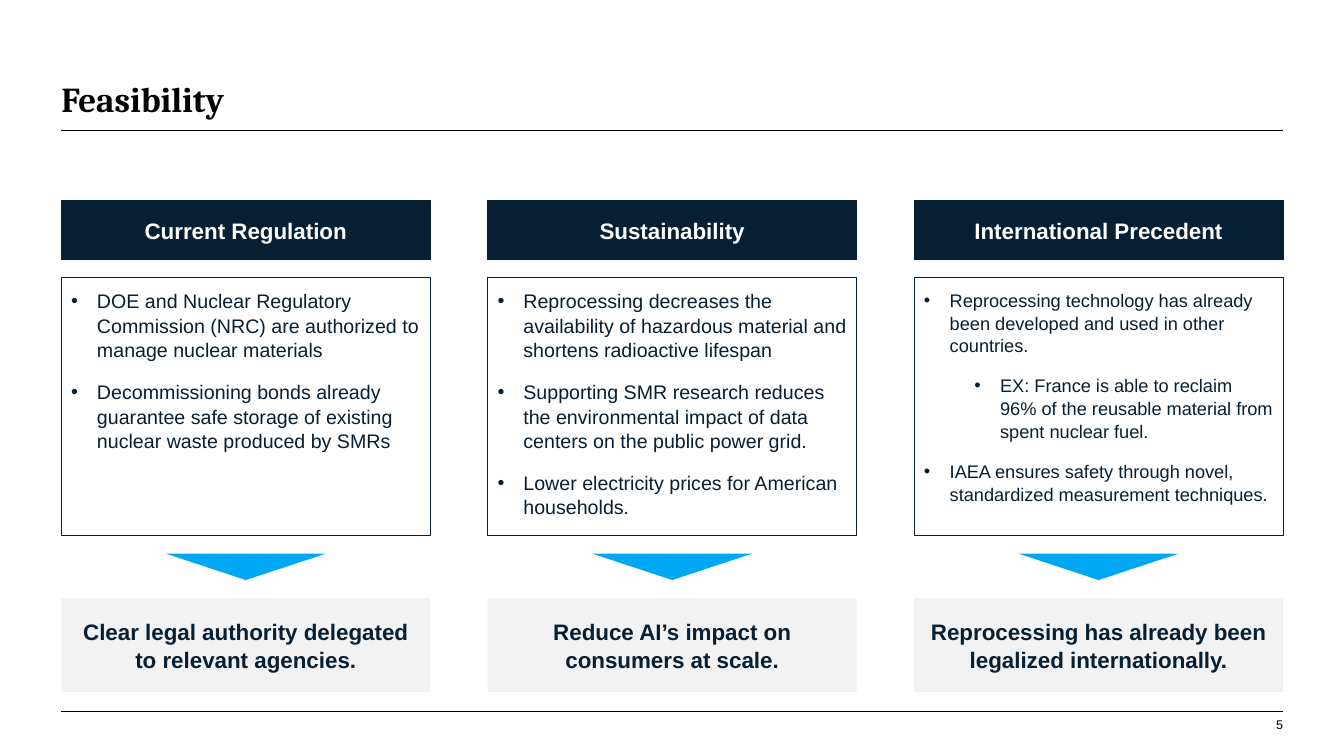
"""Build the Feasibility slide: three columns of heading, points, arrow and result."""
from dataclasses import dataclass

from lxml.etree import SubElement
from pptx import Presentation
from pptx.dml.color import RGBColor as RGB
from pptx.enum.shapes import MSO_CONNECTOR as LINE, MSO_SHAPE as SHAPE
from pptx.enum.text import MSO_ANCHOR as ANCHOR, MSO_AUTO_SIZE as FIT, PP_ALIGN as ALIGN
from pptx.oxml.ns import qn
from pptx.util import Pt


@dataclass(frozen=True)
class Theme:
    navy: str = "061F32"
    blue: str = "00A7F2"
    gray: str = "F2F2F2"
    white: str = "FFFFFF"
    black: str = "000000"
    serif: str = "Cambria"
    sans: str = "Arial"
    title: int = 25
    head: int = 16
    body: int = 14
    small: int = 13
    page: int = 9
    thin: float = 0.75


theme = Theme()


def write(shape, *items, size, color=theme.navy, font=theme.sans, bold=False,
          align=ALIGN.LEFT, anchor=ANCHOR.MIDDLE, side=7.2, edge=7.2,
          lead=1.05, bullet=False):
    """Fill a shape with (level, text) paragraphs in one format."""
    frame = shape.text_frame
    frame.word_wrap = True
    frame.auto_size = FIT.NONE
    frame.vertical_anchor = anchor
    frame.margin_left = frame.margin_right = Pt(side)
    frame.margin_top = frame.margin_bottom = Pt(edge)
    for i, (level, text) in enumerate(items):
        para = frame.add_paragraph() if i else frame.paragraphs[0]
        if bullet:
            props = para._p.get_or_add_pPr()
            props.set("marL", str(Pt(18.4 + 36 * level)))
            props.set("indent", str(Pt(-18.4)))
            tint = SubElement(props, qn("a:buClr"))
            SubElement(tint, qn("a:srgbClr"), val=color)
            SubElement(props, qn("a:buFont"), typeface=theme.sans)
            SubElement(props, qn("a:buChar"), char="•")
        para.level = level
        para.alignment = align
        para.line_spacing = lead
        para.space_before = Pt(12 if i else 0)
        para.space_after = Pt(0)
        run = para.add_run()
        run.text = text
        run.font.size = Pt(size)
        run.font.name = font
        run.font.bold = bold
        run.font.color.rgb = RGB.from_string(color)


def draw(kind, left, top, width, height, fill, line=None):
    """Add a flat filled shape with an optional outline."""
    shape = slide.shapes.add_shape(kind, Pt(left), Pt(top), Pt(width), Pt(height))
    shape.shadow.inherit = False
    shape.fill.solid()
    shape.fill.fore_color.rgb = RGB.from_string(fill)
    if line:
        shape.line.color.rgb = RGB.from_string(line)
        shape.line.width = Pt(theme.thin)
    else:
        shape.line.fill.background()
    return shape


deck = Presentation()
deck.slide_width, deck.slide_height = Pt(960), Pt(540)
slide = deck.slides.add_slide(deck.slide_layouts[5])

left, right = 43.8, 916.5
width = 263.6
step = (right - left - width) / 2

title = slide.shapes.title
title.left, title.top = Pt(left), Pt(28)
title.width, title.height = Pt(right - left), Pt(57.6)
write(title, (0, "Feasibility"), size=theme.title, color=theme.black,
      font=theme.serif, bold=True, anchor=ANCHOR.BOTTOM, side=0, edge=0, lead=1)

for y in (93, 508.3):
    rule = slide.shapes.add_connector(LINE.STRAIGHT, Pt(left), Pt(y), Pt(right), Pt(y))
    rule.line.color.rgb = RGB.from_string(theme.black)
    rule.line.width = Pt(theme.thin)
    SubElement(rule._element.spPr, qn("a:effectLst"))

page = slide.shapes.add_textbox(Pt(right - 26), Pt(512), Pt(26), Pt(10.8))
write(page, (0, "5"), size=theme.page, color=theme.black, align=ALIGN.RIGHT,
      anchor=ANCHOR.BOTTOM, side=0, edge=0, lead=1)

columns = [
    ("Current Regulation", theme.body, [
        (0, "DOE and Nuclear Regulatory Commission (NRC) are authorized to manage nuclear materials"),
        (0, "Decommissioning bonds already guarantee safe storage of existing nuclear waste produced by SMRs"),
    ], "Clear legal authority delegated to relevant agencies."),
    ("Sustainability", theme.body, [
        (0, "Reprocessing decreases the availability of hazardous material and shortens radioactive lifespan"),
        (0, "Supporting SMR research reduces the environmental impact of data centers on the public power grid."),
        (0, "Lower electricity prices for American households."),
    ], "Reduce AI’s impact on consumers at scale."),
    ("International Precedent", theme.small, [
        (0, "Reprocessing technology has already been developed and used in other countries."),
        (1, "EX: France is able to reclaim 96% of the reusable material from spent nuclear fuel."),
        (0, "IAEA ensures safety through novel, standardized measurement techniques."),
    ], "Reprocessing has already been legalized internationally."),
]

for i, (name, size, points, result) in enumerate(columns):
    x = left + i * step
    head = draw(SHAPE.RECTANGLE, x, 143.3, width, 42.2, theme.navy, theme.navy)
    write(head, (0, name), size=theme.head, color=theme.white, bold=True,
          align=ALIGN.CENTER, edge=3.6)
    box = draw(SHAPE.RECTANGLE, x, 198.4, width, 184.2, theme.white, theme.navy)
    write(box, *points, size=size, anchor=ANCHOR.TOP, bullet=True)
    arrow = draw(SHAPE.ISOSCELES_TRIANGLE, x + (width - 113.8) / 2, 395.5, 113.8, 18.8,
                 theme.blue)
    arrow.rotation = 180
    foot = draw(SHAPE.RECTANGLE, x, 427.2, width, 67, theme.gray)
    write(foot, (0, result), size=theme.head, bold=True, align=ALIGN.CENTER)

deck.save("out.pptx")
